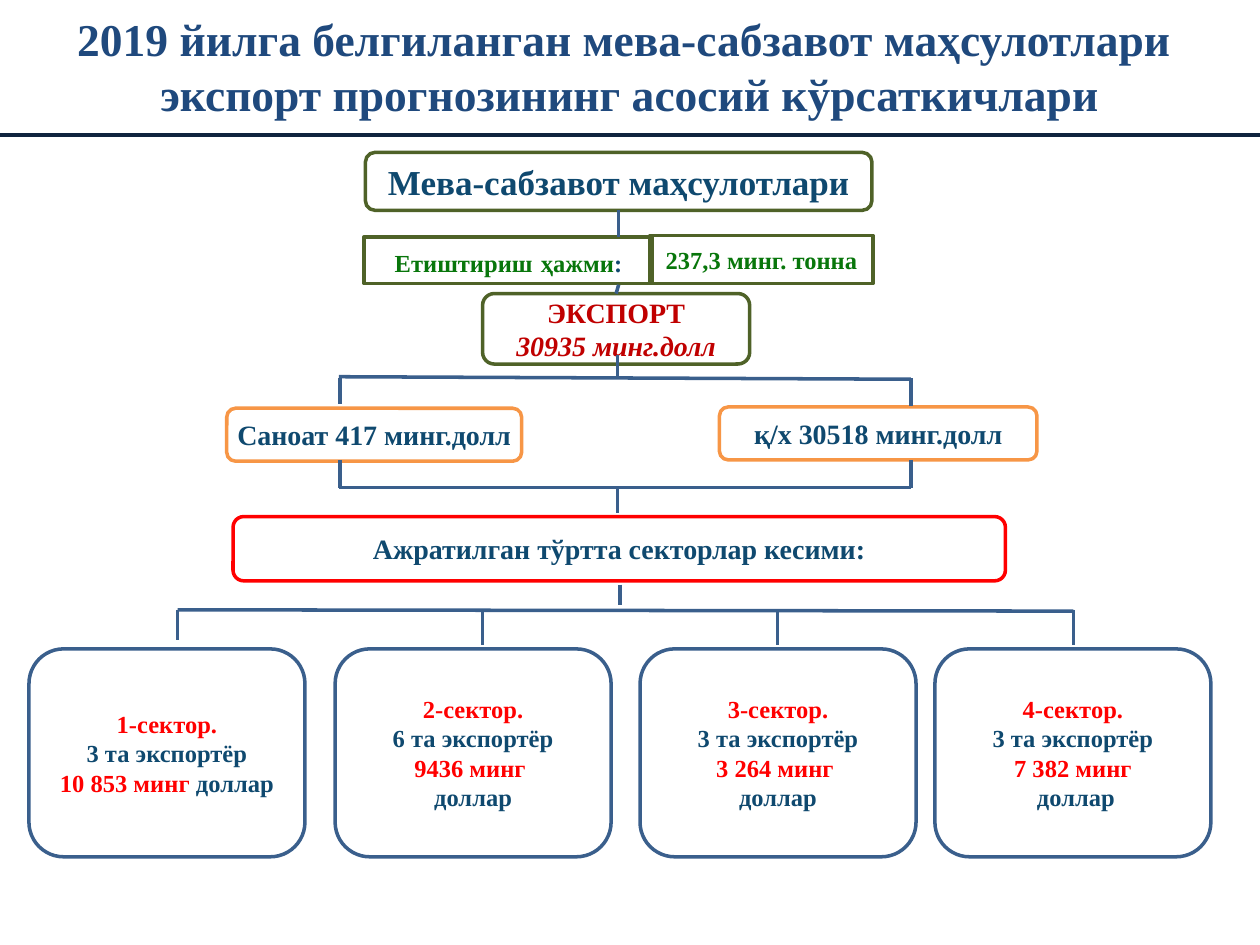
from dataclasses import dataclass
from typing import Optional

from lxml import etree
from pptx import Presentation
from pptx.dml.color import RGBColor
from pptx.enum import shapes, text
from pptx.oxml.ns import qn
from pptx.util import Inches, Pt

FONT = "Times New Roman"
TITLE_BLUE, NAVY, BLUE, TEAL = "1F497D", "0F243E", "3A5F8C", "0F496F"
OLIVE, GREEN, ORANGE, RED, DARK_RED = "4F6228", "08760B", "F79646", "FF0000", "C00000"
RECT = shapes.MSO_SHAPE.RECTANGLE
ROUNDED = shapes.MSO_SHAPE.ROUNDED_RECTANGLE
TOP, BOTTOM = 0, 2


@dataclass
class Run:
    text: str
    color: str
    size: float = 14
    italic: bool = False


@dataclass
class Box:
    key: str
    left: float
    top: float
    width: float
    height: float
    outline: str
    paragraphs: list[list[Run]]
    geometry: int = ROUNDED
    margins: tuple[float, float] = (0, 0)


@dataclass
class Line:
    start: tuple[float, float]
    end: tuple[float, float]
    color: str = BLUE
    width: float = 2
    from_box: Optional[str] = None
    to_box: Optional[str] = None


def rgb(value: str) -> RGBColor:
    return RGBColor.from_string(value)


def write_text(frame, paragraphs: list[list[Run]], **frame_format) -> None:
    settings = {"word_wrap": True, "auto_size": text.MSO_AUTO_SIZE.NONE, **frame_format}
    for name, value in settings.items():
        setattr(frame, name, value)
    for index, runs in enumerate(paragraphs):
        paragraph = frame.add_paragraph() if index else frame.paragraphs[0]
        paragraph.alignment = text.PP_ALIGN.CENTER
        for item in runs:
            run = paragraph.add_run()
            run.text = item.text
            font_format = {"name": FONT, "size": Pt(item.size), "bold": True,
                           "italic": item.italic}
            for name, value in font_format.items():
                setattr(run.font, name, value)
            run.font.color.rgb = rgb(item.color)


def add_title(slide, lines: list[str]) -> None:
    title = slide.shapes.title
    position = {"left": 0, "top": 0.04, "width": 10, "height": 1.02}
    for name, value in position.items():
        setattr(title, name, Inches(value))
    write_text(title.text_frame, [[Run(line, TITLE_BLUE, 26)] for line in lines],
               vertical_anchor=text.MSO_ANCHOR.TOP, margin_left=0, margin_right=0,
               margin_top=Inches(0.05), margin_bottom=0)


def add_box(slide, box: Box):
    shape = slide.shapes.add_shape(
        box.geometry, Inches(box.left), Inches(box.top), Inches(box.width), Inches(box.height))
    shape.shadow.inherit = False
    shape.fill.background()
    shape.line.color.rgb = rgb(box.outline)
    shape.line.width = Pt(2)
    side, edge = (Inches(margin) for margin in box.margins)
    write_text(shape.text_frame, box.paragraphs, vertical_anchor=text.MSO_ANCHOR.MIDDLE,
               margin_left=side, margin_right=side, margin_top=edge, margin_bottom=edge)
    return shape


def add_line(slide, line: Line, boxes: dict) -> None:
    """Draw a line, joined to the bottom of from_box and the top of to_box."""
    connector = slide.shapes.add_connector(
        shapes.MSO_CONNECTOR.STRAIGHT, *(Inches(value) for value in line.start + line.end))
    if line.from_box:
        connector.begin_connect(boxes[line.from_box], BOTTOM)
    if line.to_box:
        connector.end_connect(boxes[line.to_box], TOP)
    connector.line.color.rgb = rgb(line.color)
    connector.line.width = Pt(line.width)
    etree.SubElement(connector.element.spPr, qn("a:effectLst"))


def sector_box(number: int, left: float, exporters: int, amount: list[list[Run]]) -> Box:
    return Box(f"sector {number}", left, 5.15, 2.19, 1.65, BLUE, [
        [Run(f"{number}-сектор.", RED)],
        [Run(f"{exporters} та экспортёр", TEAL)],
        *amount,
    ])


BOXES = [
    Box("volume label", 2.89, 1.88, 2.29, 0.37, OLIVE,
        [[Run("Етиштириш", GREEN), Run(" ", GREEN, 18), Run("ҳажми", GREEN), Run(":", TEAL)]],
        RECT, (0.1, 0.05)),
    Box("volume value", 5.16, 1.87, 1.77, 0.38, OLIVE,
        [[Run("237,3 минг. тонна", GREEN)]], RECT, (0.1, 0.05)),
    Box("products", 2.9, 1.21, 4.02, 0.46, OLIVE,
        [[Run("Мева-сабзавот маҳсулотлари", TEAL, 20)]]),
    Box("sectors", 1.85, 4.1, 6.13, 0.51, RED,
        [[Run("Ажратилган тўртта секторлар кесими:", TEAL, 16)]]),
    Box("export", 3.83, 2.33, 2.12, 0.56, OLIVE,
        [[Run("ЭКСПОРТ", DARK_RED, 16)], [Run("30935 минг.долл", DARK_RED, 16, True)]]),
    Box("industry", 1.8, 3.24, 2.34, 0.42, ORANGE, [[Run("Саноат 417 минг.долл", TEAL, 16)]]),
    Box("agriculture", 5.71, 3.23, 2.52, 0.42, ORANGE,
        [[Run("қ/х 30518 минг.долл", TEAL, 16)]]),
    sector_box(1, 0.23, 3, [[Run("10 853 минг ", RED), Run("доллар", TEAL)]]),
    sector_box(2, 2.66, 6, [[Run("9436 минг ", RED)], [Run("доллар", TEAL)]]),
    sector_box(3, 5.08, 3, [[Run("3 264 минг ", RED)], [Run("доллар", TEAL)]]),
    sector_box(4, 7.42, 3, [[Run("7 382 минг", RED)], [Run(" доллар", TEAL)]]),
]

BRANCH_LEFT, BRANCH_RIGHT, TRUNK = 2.7, 7.23, 4.9
SECTOR_DROPS = {1.41: 5.08, 3.83: 5.12, 6.17: 5.12, 8.52: 5.12}
LINES = [
    Line((0, 1.07), (10, 1.07), NAVY, 2.25),
    Line((4.91, 1.67), (4.91, 1.88), from_box="products"),
    Line((4.91, 2.26), (4.89, 2.33), to_box="export"),
    Line((TRUNK, 2.82), (TRUNK, 3.01)),
    Line((TRUNK, 2.99), (TRUNK, 3.01)),
    Line((2.69, 2.99), (BRANCH_RIGHT, 3.01)),
    Line((BRANCH_LEFT, 3), (BRANCH_LEFT, 3.21)),
    Line((BRANCH_RIGHT, 3), (BRANCH_RIGHT, 3.22)),
    Line((2.69, 3.87), (BRANCH_RIGHT, 3.87)),
    *(Line((x, 3.65), (x, 3.87)) for x in (BRANCH_LEFT, BRANCH_RIGHT)),
    Line((TRUNK, 3.87), (TRUNK, 3.89)),
    Line((TRUNK, 3.88), (TRUNK, 4.07)),
    Line((4.92, 4.64), (4.92, 4.8)),
    Line((1.41, 4.84), (8.52, 4.85)),
    *(Line((x, 4.84), (x, bottom)) for x, bottom in SECTOR_DROPS.items()),
]


def main() -> None:
    presentation = Presentation()
    presentation.slide_width, presentation.slide_height = Inches(10), Inches(7.5)
    slide = presentation.slides.add_slide(presentation.slide_layouts[5])
    add_title(slide, ["2019 йилга белгиланган мева-сабзавот маҳсулотлари ",
                      "экспорт прогнозининг асосий кўрсаткичлари"])
    boxes = {box.key: add_box(slide, box) for box in BOXES}
    for line in LINES:
        add_line(slide, line, boxes)
    presentation.save("out.pptx")


if __name__ == "__main__":
    main()
